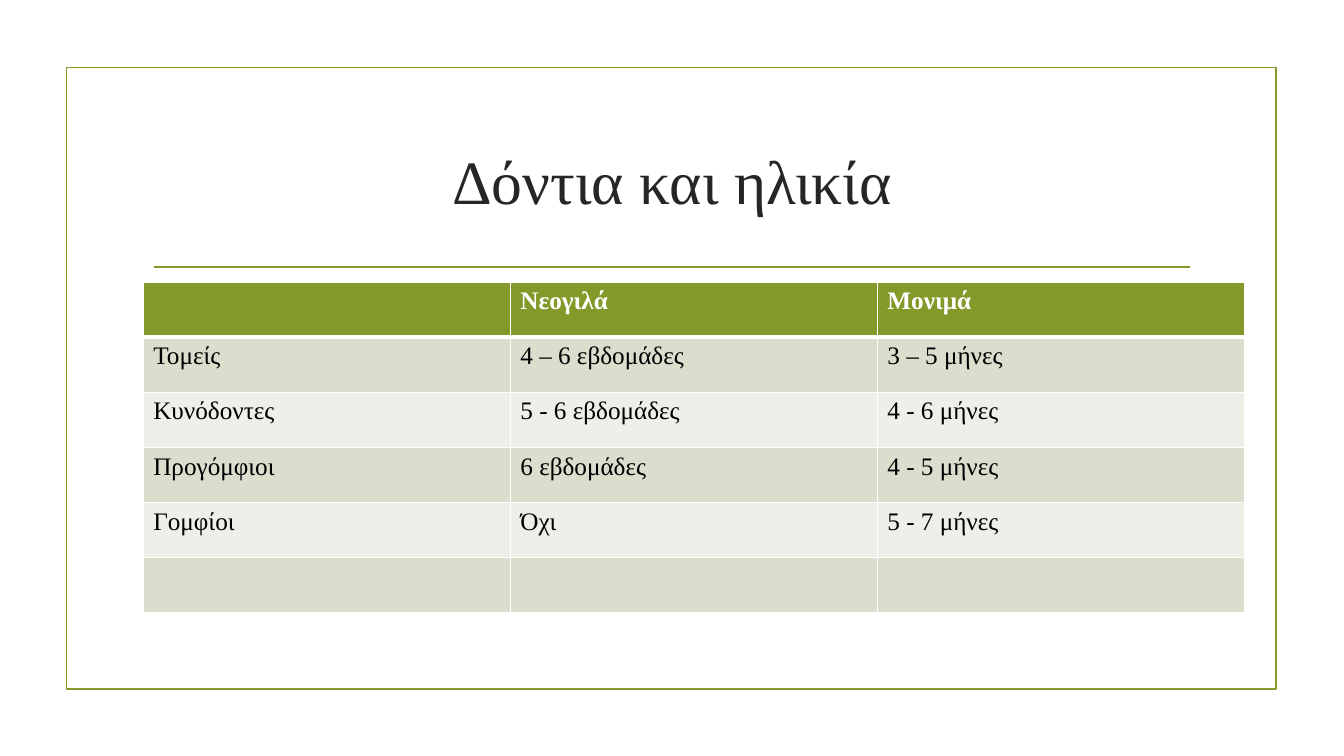
"""Build the slide on teeth and age: framed title above a table."""
from dataclasses import dataclass

from lxml.etree import SubElement
from pptx import Presentation
from pptx.dml.color import RGBColor
from pptx.enum.shapes import MSO_CONNECTOR, MSO_SHAPE
from pptx.enum.text import MSO_ANCHOR as ANCHOR, PP_ALIGN as ALIGN
from pptx.oxml.ns import qn
from pptx.util import Cm, Pt

GREEN, WHITE, BLACK, GREY = "83992A", "FFFFFF", "000000", "262626"
BANDS = ("EDEFE8", "D9DECD")
FONT = "Times New Roman"
COL_WIDTH, ROW_HEIGHT = 9.25, 1.39


@dataclass
class Box:
    left: float
    top: float
    width: float
    height: float

    def lengths(self) -> tuple:
        return tuple(Cm(v) for v in (self.left, self.top, self.width, self.height))


@dataclass
class Row:
    cells: tuple
    fill: str
    color: str = BLACK
    bold: bool = False
    bottom: float = 1
    top: float = 1


FRAME = Box(1.68, 1.7, 30.48, 15.67)
TITLE = Box(3.61, 2.72, 26.67, 3.63)
RULE = Box(3.89, 6.73, 26.11, 0)
TABLE = Box(3.61, 7.11, 3 * COL_WIDTH, 6 * ROW_HEIGHT)

HEADER = Row(("", "Νεογιλά", "Μονιμά"), GREEN, WHITE, True, bottom=3)
BODY = (
    ("Τομείς", "4 – 6 εβδομάδες", "3 – 5 μήνες"),
    ("Κυνόδοντες", "5 - 6 εβδομάδες", "4 - 6 μήνες"),
    ("Προγόμφιοι", "6 εβδομάδες", "4 - 5 μήνες"),
    ("Γομφίοι", "Όχι", "5 - 7 μήνες"),
    ("", "", ""),
)


def rgb(color: str) -> RGBColor:
    return RGBColor.from_string(color)


def format_font(font, color: str, **values) -> None:
    for name, value in {"name": FONT, **values}.items():
        setattr(font, name, value)
    font.color.rgb = rgb(color)


def format_line(line) -> None:
    line.color.rgb = rgb(GREEN)
    line.width = Pt(1.25)


def add_frame(s, box: Box) -> None:
    sp = s.shapes.add_shape(MSO_SHAPE.RECTANGLE, *box.lengths())
    sp.shadow.inherit = False
    sp.fill.background()
    format_line(sp.line)


def add_rule(s, box: Box) -> None:
    left, top, width, height = box.lengths()
    cxn = s.shapes.add_connector(
        MSO_CONNECTOR.STRAIGHT, left, top, left + width, top + height)
    format_line(cxn.line)
    SubElement(cxn._element.spPr, qn("a:effectLst"))


def set_title(s, box: Box, text: str) -> None:
    sp = s.shapes.title
    sp.left, sp.top, sp.width, sp.height = box.lengths()
    tf = sp.text_frame
    tf.text = text
    for name, value in {"word_wrap": True, "vertical_anchor": ANCHOR.MIDDLE}.items():
        setattr(tf, name, value)
    p = tf.paragraphs[0]
    p.alignment = ALIGN.CENTER
    format_font(p.runs[0].font, GREY, size=Pt(44))


def add_borders(cell, row: Row) -> None:
    tc_pr = cell._tc.get_or_add_tcPr()
    for side, width in {"L": 1, "R": 1, "T": row.top, "B": row.bottom}.items():
        ln = SubElement(tc_pr, qn(f"a:ln{side}"), w=str(Pt(width)))
        SubElement(SubElement(ln, qn("a:solidFill")), qn("a:srgbClr"), val=WHITE)


def fill_cell(cell, text: str, row: Row) -> None:
    add_borders(cell, row)
    cell.fill.solid()
    cell.fill.fore_color.rgb = rgb(row.fill)
    p = cell.text_frame.paragraphs[0]
    if text:
        r = p.add_run()
        r.text = text
        format_font(r.font, row.color, size=Pt(18), bold=row.bold)


def add_teeth_table(s, box: Box, rows: list) -> None:
    table = s.shapes.add_table(len(rows), len(rows[0].cells), *box.lengths()).table
    for col in table.columns:
        col.width = Cm(COL_WIDTH)
    for table_row, row in zip(table.rows, rows):
        table_row.height = Cm(ROW_HEIGHT)
        for cell, text in zip(table_row.cells, row.cells):
            fill_cell(cell, text, row)


def main() -> None:
    prs = Presentation()
    prs.slide_width, prs.slide_height = Cm(33.87), Cm(19.05)
    s = prs.slides.add_slide(prs.slide_layouts[5])
    add_frame(s, FRAME)
    add_rule(s, RULE)
    set_title(s, TITLE, "Δόντια και ηλικία")
    rows = [HEADER]
    for i, cells in enumerate(BODY, 1):
        rows.append(Row(cells, BANDS[i % 2], top=rows[-1].bottom))
    add_teeth_table(s, TABLE, rows)
    prs.save("out.pptx")


if __name__ == "__main__":
    main()
